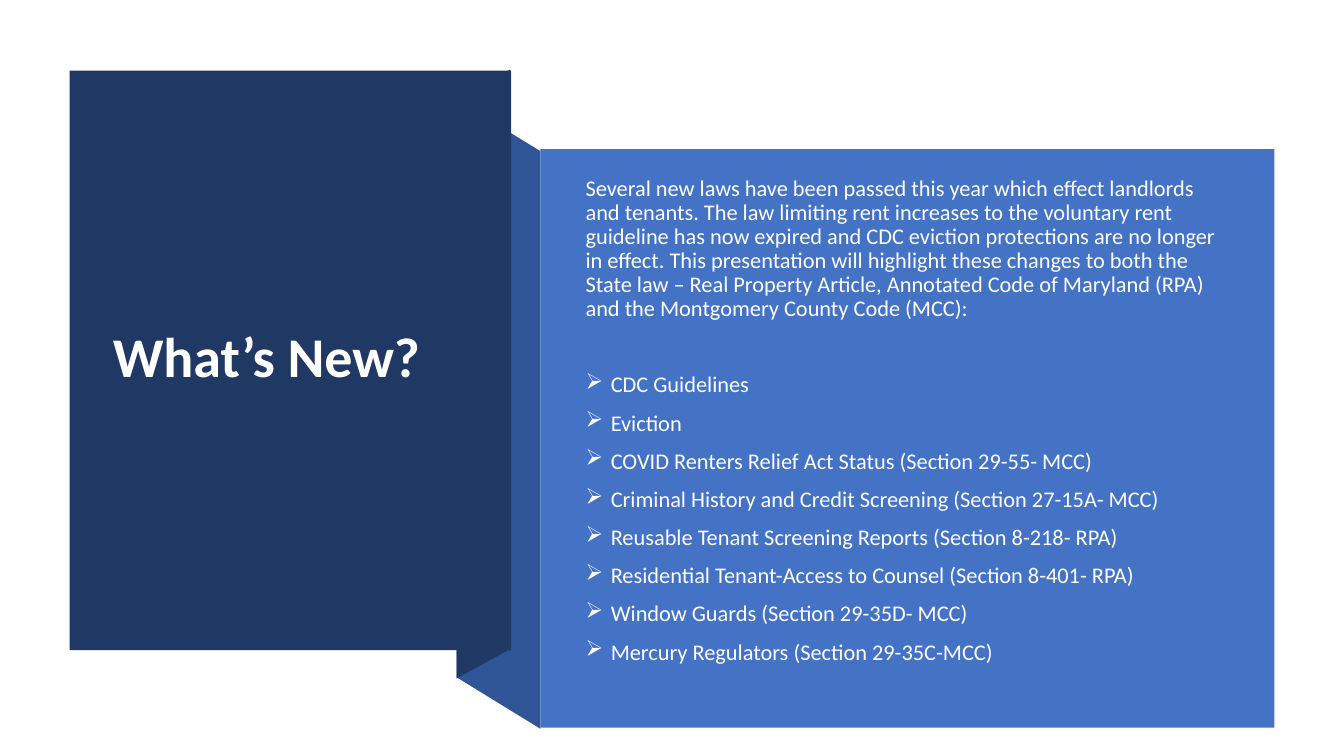
from lxml import etree
from pptx import Presentation
from pptx.dml.color import RGBColor
from pptx.enum.shapes import MSO_SHAPE
from pptx.enum.text import MSO_ANCHOR, PP_ALIGN
from pptx.oxml.ns import qn
from pptx.util import Inches, Pt

RECT = MSO_SHAPE.RECTANGLE
MIDDLE = MSO_ANCHOR.MIDDLE
LEFT = PP_ALIGN.LEFT

COLORS = {"navy": "203864", "fold": "2F5597", "panel": "4472C4",
          "white": "FFFFFF", "body": "FEFFFF"}
FONT = "Calibri"
TITLE = "What’s New?"
INTRO = (
    "Several new laws have been passed this year which effect landlords and tenants. "
    "The law limiting rent increases to the voluntary rent guideline has now expired "
    "and CDC eviction protections are no longer in effect. This presentation will "
    "highlight these changes to both the State law – Real Property Article, Annotated "
    "Code of Maryland (RPA) and the Montgomery County Code (MCC):"
)
TOPICS = [
    "CDC Guidelines",
    "Eviction",
    "COVID Renters Relief Act Status (Section 29-55- MCC)",
    "Criminal History and Credit Screening (Section 27-15A- MCC)",
    "Reusable Tenant Screening Reports (Section 8-218- RPA)",
    "Residential Tenant-Access to Counsel (Section 8-401- RPA)",
    "Window Guards (Section 29-35D- MCC)",
    "Mercury Regulators (Section 29-35C-MCC)",
]
FOLDS = [
    ("fold", [(5.36, 7.23), (4.53, 6.72), (4.53, 0.99), (5.36, 1.5)]),
    ("navy", [(5.06, 6.44), (4.53, 6.73), (4.53, 0.98), (5.06, 0.69)]),
]
BLOCKS = [("navy", (0.69, 0.7, 4.38, 5.75)), ("panel", (5.36, 1.48, 7.28, 5.74))]
TITLE_BOX = (1.02, 1.07, 3.71, 4.99)
BODY_BOX = (5.71, 1.7, 6.6, 5.32)
BODY_BOTTOM = 0.42
INDENT = 0.25
GAP, LIST_GAP = 10, 37


def paint(sp, color):
    sp.shadow.inherit = False
    sp.fill.solid()
    sp.fill.fore_color.rgb = RGBColor.from_string(COLORS[color])
    sp.line.fill.background()


def text_frame(slide, box, bottom=0.05):
    tf = slide.shapes.add_textbox(*map(Inches, box)).text_frame
    tf.word_wrap = True
    tf.vertical_anchor = MIDDLE
    tf.margin_bottom = Inches(bottom)
    return tf


def write(tf, text, size=16, color="body", bold=False, before=0, bullet=None):
    p = tf.add_paragraph() if tf.text else tf.paragraphs[0]
    p.alignment = LEFT
    p.line_spacing = 0.9
    p.space_before = Pt(before)
    if bullet:
        pPr = p._p.get_or_add_pPr()
        pPr.set("marL", str(Inches(INDENT)))
        pPr.set("indent", str(-Inches(INDENT)))
        etree.SubElement(pPr, qn("a:buChar")).set("char", bullet)
    r = p.add_run()
    r.text = text
    r.font.name = FONT
    r.font.size = Pt(size)
    r.font.bold = bold
    r.font.color.rgb = RGBColor.from_string(COLORS[color])


def main():
    prs = Presentation()
    prs.slide_width, prs.slide_height = Inches(13.33), Inches(7.5)
    s = prs.slides.add_slide(prs.slide_layouts[6])

    for color, points in FOLDS:
        corners = [(Inches(x), Inches(y)) for x, y in points]
        fb = s.shapes.build_freeform(*corners[0])
        fb.add_line_segments(corners[1:], close=True)
        paint(fb.convert_to_shape(), color)
    for color, box in BLOCKS:
        paint(s.shapes.add_shape(RECT, *map(Inches, box)), color)

    write(text_frame(s, TITLE_BOX), TITLE, size=40, color="white", bold=True)
    body = text_frame(s, BODY_BOX, bottom=BODY_BOTTOM)
    write(body, INTRO, before=GAP)
    for i, topic in enumerate(TOPICS):
        write(body, topic, before=GAP if i else LIST_GAP, bullet="➢")

    prs.save("out.pptx")


if __name__ == "__main__":
    main()
